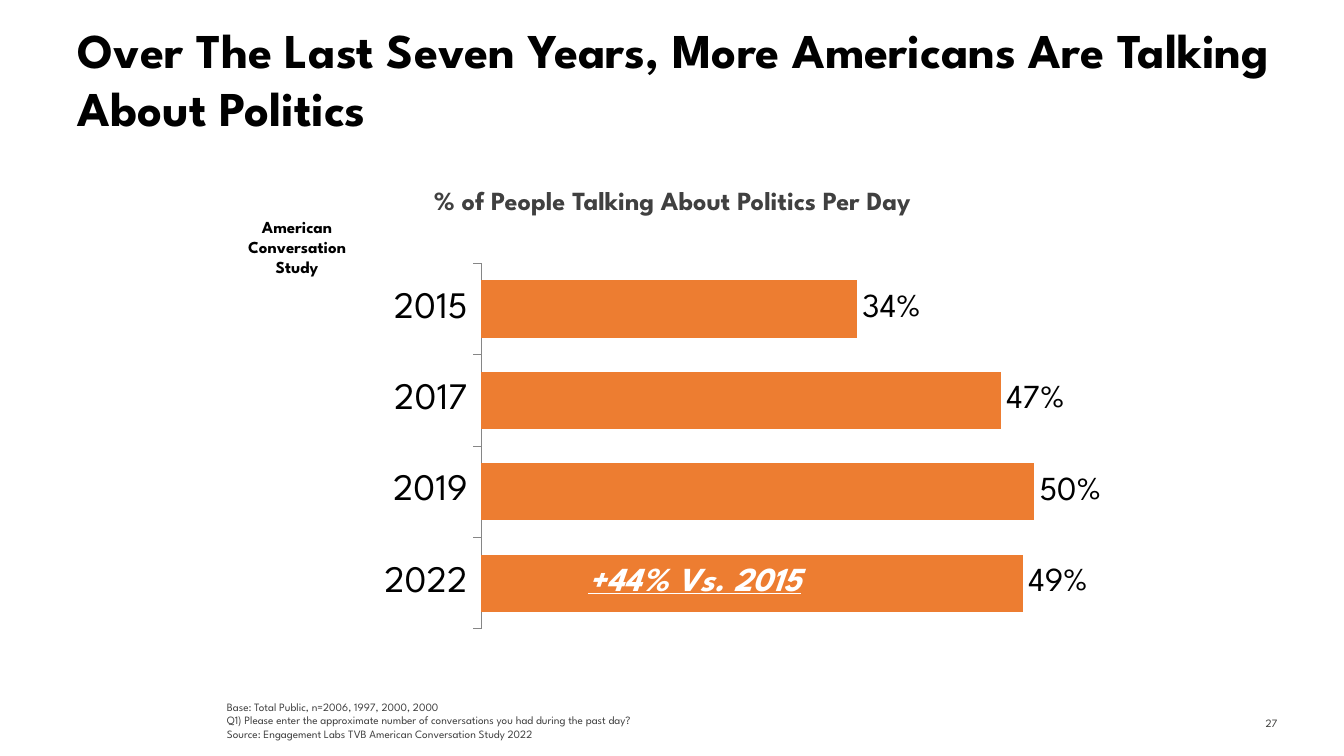
from dataclasses import dataclass

from lxml import etree
from pptx import Presentation
from pptx.chart.data import CategoryChartData
from pptx.dml.color import RGBColor
from pptx.enum.chart import XL_CHART_TYPE, XL_LABEL_POSITION, XL_TICK_LABEL_POSITION, XL_TICK_MARK
from pptx.enum.text import MSO_ANCHOR, MSO_AUTO_SIZE, PP_ALIGN
from pptx.oxml import parse_xml
from pptx.util import Inches, Pt

LEFT, CENTER, RIGHT = PP_ALIGN.LEFT, PP_ALIGN.CENTER, PP_ALIGN.RIGHT
TOP, MIDDLE, BOTTOM = MSO_ANCHOR.TOP, MSO_ANCHOR.MIDDLE, MSO_ANCHOR.BOTTOM
TITLE_ONLY = 5
CHART_NAMESPACE = "http://schemas.openxmlformats.org/drawingml/2006/chart"


@dataclass(frozen=True)
class Theme:
    font: str = "League Spartan"
    black: RGBColor = RGBColor(0, 0, 0)
    gray: RGBColor = RGBColor(0x40, 0x40, 0x40)
    number_gray: RGBColor = RGBColor(0x3C, 0x3C, 0x3A)
    axis_gray: RGBColor = RGBColor(0x86, 0x86, 0x86)
    white: RGBColor = RGBColor(0xFF, 0xFF, 0xFF)
    orange: RGBColor = RGBColor(0xED, 0x7D, 0x31)
    title_size: int = 26
    category_size: int = 20
    value_size: int = 18
    chart_title_size: int = 14
    tag_size: int = 9
    number_gap_size: int = 8
    note_size: int = 6


THEME = Theme()


def format_font(font, size, color, **styles):
    values = {"name": THEME.font, "size": Pt(size), **styles}
    for name, value in values.items():
        setattr(font, name, value)
    font.color.rgb = color


def fill_text(shape, text, size, color, align=LEFT, anchor=TOP, wrap=True, top_inset=0.05, **styles):
    frame = shape.text_frame
    frame.text = text
    settings = {
        "word_wrap": wrap,
        "auto_size": MSO_AUTO_SIZE.NONE,
        "vertical_anchor": anchor,
        "margin_left": Inches(0.1),
        "margin_right": Inches(0.1),
        "margin_top": Inches(top_inset),
        "margin_bottom": Inches(0.05),
    }
    for name, value in settings.items():
        setattr(frame, name, value)
    for paragraph in frame.paragraphs:
        paragraph.alignment = align
        for run in paragraph.runs:
            format_font(run.font, size, color, **styles)


def add_text(slide, box, text, size, color, **options):
    shape = slide.shapes.add_textbox(*map(Inches, box))
    fill_text(shape, text, size, color, **options)
    return shape


def add_title(slide, box, text):
    title = slide.shapes.title
    title.left, title.top, title.width, title.height = map(Inches, box)
    fill_text(title, text, THEME.title_size, THEME.black, top_inset=0, bold=True)


def set_plot_layout(chart, x, y, w, h):
    """Fix the inner plot area, given as fractions of the chart."""
    plot_area = chart.plots[0]._element.getparent()
    for old_layout in plot_area.findall(f"{{{CHART_NAMESPACE}}}layout"):
        plot_area.remove(old_layout)
    layout = etree.Element(f"{{{CHART_NAMESPACE}}}layout", nsmap={"c": CHART_NAMESPACE})
    manual = etree.SubElement(layout, f"{{{CHART_NAMESPACE}}}manualLayout")
    values = {"layoutTarget": "inner", "xMode": "edge", "yMode": "edge", "x": x, "y": y, "w": w, "h": h}
    for name, value in values.items():
        etree.SubElement(manual, f"{{{CHART_NAMESPACE}}}{name}", val=str(value))
    plot_area.insert(0, parse_xml(etree.tostring(layout)))


def add_politics_chart(slide, box):
    data = CategoryChartData(number_format="0%")
    data.categories = ["2015", "2017", "2019", "2022"]
    data.add_series("Series 1", [0.34, 0.47, 0.5, 0.49])
    chart = slide.shapes.add_chart(XL_CHART_TYPE.BAR_CLUSTERED, *map(Inches, box), data).chart
    chart.has_legend = False
    chart.has_title = False
    format_font(chart.font, THEME.value_size, THEME.black)
    width, height = box[2:]
    set_plot_layout(chart, 2.57 / width, 0.1 / height, 4.94 / width, 2.72 / height)

    years = chart.category_axis
    years.reverse_order = True
    years.has_major_gridlines = False
    years.major_tick_mark = XL_TICK_MARK.OUTSIDE
    years.tick_label_position = XL_TICK_LABEL_POSITION.NEXT_TO_AXIS
    years.format.line.color.rgb = THEME.axis_gray
    years.format.line.width = Pt(0.5)
    format_font(years.tick_labels.font, THEME.category_size, THEME.black)

    shares = chart.value_axis
    shares.minimum_scale, shares.maximum_scale = 0, 0.6
    shares.has_major_gridlines = False
    shares.visible = False

    plot = chart.plots[0]
    plot.gap_width = 60
    plot.vary_by_categories = False
    fill = plot.series[0].format.fill
    fill.solid()
    fill.fore_color.rgb = THEME.orange
    labels = plot.series[0].data_labels
    labels.show_value = True
    labels.number_format, labels.number_format_is_linked = "0%", False
    labels.position = XL_LABEL_POSITION.OUTSIDE_END
    format_font(labels.font, THEME.value_size, THEME.black)


def add_chart_region(slide, left, top):
    """Place the chart with its heading, study tag and callout."""
    add_politics_chart(slide, (left, top + 0.54, 8.16, 3.44))
    add_text(slide, (left + 1.89, top, 4.21, 0.34), "% of People Talking About Politics Per Day",
             THEME.chart_title_size, THEME.gray, align=CENTER, wrap=False, bold=True)
    add_text(slide, (left + 1.76, top + 2.78, 4.8, 0.4), "+44% Vs. 2015", THEME.value_size,
             THEME.white, align=CENTER, bold=True, italic=True, underline=True)
    add_text(slide, (left + 0.69, top + 0.24, 1.02, 0.56), "American\nConversation\vStudy",
             THEME.tag_size, THEME.black, align=CENTER, bold=True)


def add_footer(slide, left, top):
    notes = "\n".join([
        "Base: Total Public, n=2006, 1997, 2000, 2000",
        "Q1) Please enter the approximate number of conversations you had during the past day?",
        "Source: Engagement Labs TVB American Conversation Study 2022",
    ])
    add_text(slide, (left, top, 8.15, 0.4), notes, THEME.note_size, THEME.gray, anchor=BOTTOM)
    number = add_text(slide, (left + 7.45, top + 0.06, 0.59, 0.3), "27", THEME.note_size,
                      THEME.number_gray, align=RIGHT, anchor=MIDDLE)
    gap = number.text_frame.paragraphs[0].add_run()
    gap.text = " "
    format_font(gap.font, THEME.number_gap_size, THEME.number_gray)


def main():
    presentation = Presentation()
    presentation.slide_width = Inches(10)
    presentation.slide_height = presentation.slide_width * 9 // 16
    slide = presentation.slides.add_slide(presentation.slide_layouts[TITLE_ONLY])
    add_title(slide, (0.48, 0.15, 9.24, 0.94),
              "Over The Last Seven Years, More Americans Are Talking About Politics")
    add_chart_region(slide, 1.01, 1.32)
    add_footer(slide, 1.59, 5.16)
    presentation.save("out.pptx")


if __name__ == "__main__":
    main()
